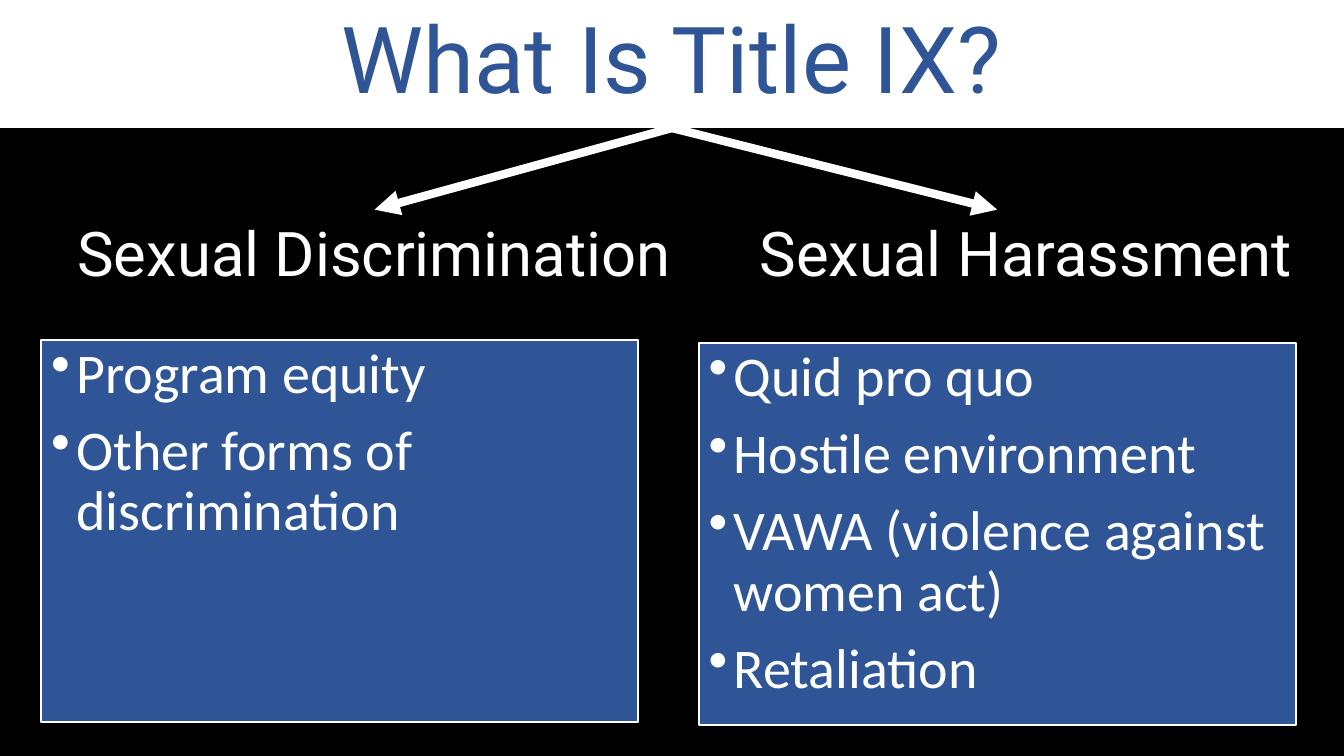
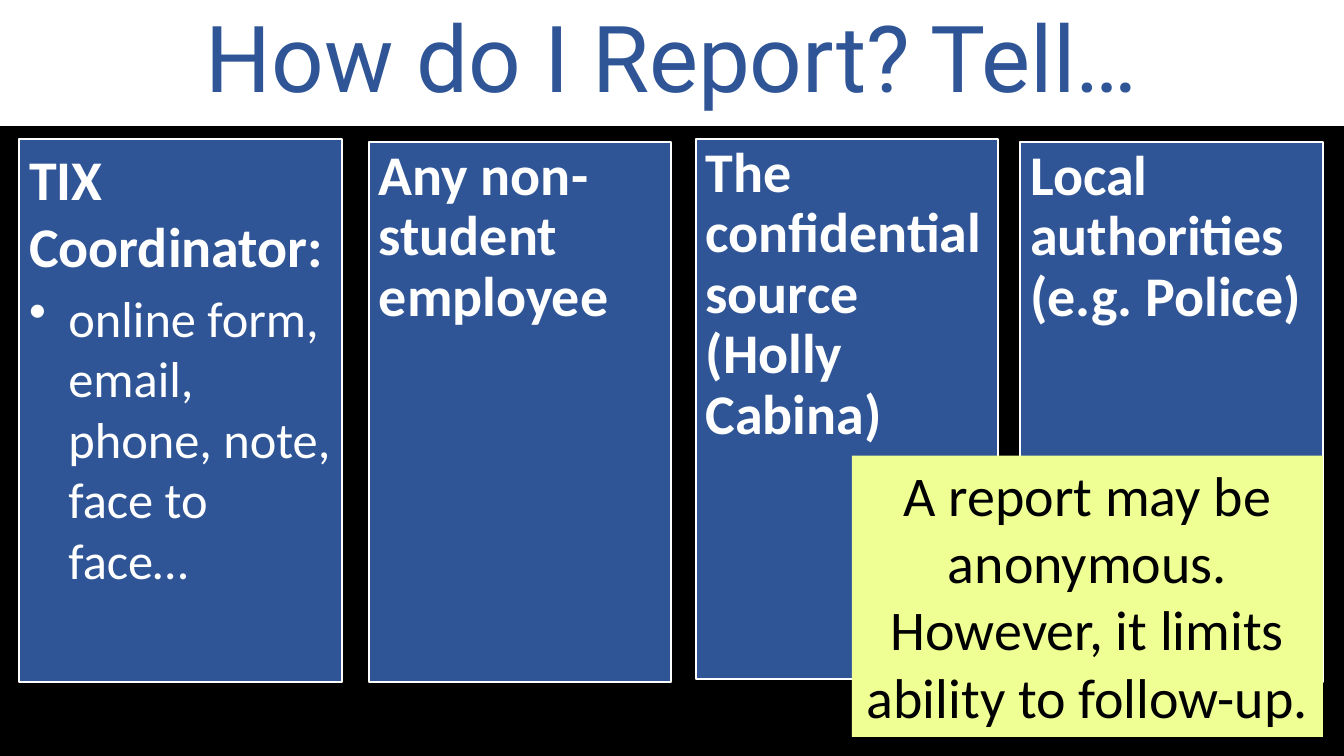
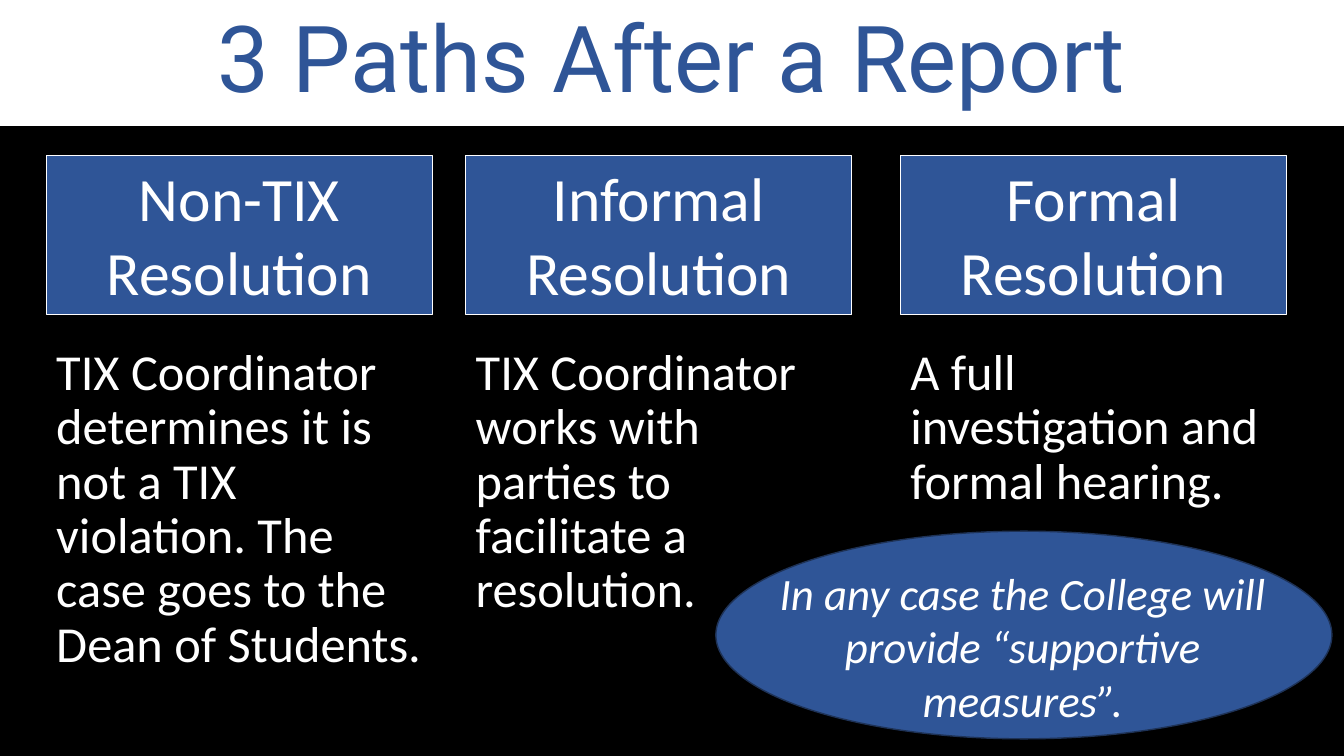
from lxml import etree
from pptx import Presentation
from pptx.dml.color import RGBColor
from pptx.enum.shapes import MSO_CONNECTOR, MSO_SHAPE
from pptx.enum.text import MSO_ANCHOR, PP_ALIGN
from pptx.oxml.ns import qn
from pptx.util import Inches, Pt

RECTANGLE, OVAL = MSO_SHAPE.RECTANGLE, MSO_SHAPE.OVAL
STRAIGHT = MSO_CONNECTOR.STRAIGHT
LEFT, CENTER = PP_ALIGN.LEFT, PP_ALIGN.CENTER
TOP, MIDDLE = MSO_ANCHOR.TOP, MSO_ANCHOR.MIDDLE
SIDE_TOP, SIDE_BOTTOM = 0, 2

COLORS = {
    "background": "000000",
    "white": "FFFFFF",
    "blue": "2F5597",
    "dark_blue": "1E3256",
    "yellow": "EFFF93",
    "black": "000000",
}
SLIDE_WIDTH, SLIDE_HEIGHT = 13.33, 7.5

# Text styles: font attributes, paragraph attributes, colour and hanging bullet
TITLE = {"font": {"name": "Roboto", "size": Pt(66)}, "color": "blue",
         "paragraph": {"alignment": CENTER, "line_spacing": 0.9}}
HEADING = {"font": {"name": "Roboto", "size": Pt(44)},
           "paragraph": {"alignment": CENTER}}
BODY = {"font": {"name": "Calibri", "size": Pt(36)},
        "paragraph": {"alignment": LEFT, "line_spacing": 0.9, "space_after": Pt(12)}}
BULLET = {**BODY, "font": {"name": "Calibri", "size": Pt(40)}, "bullet": 0.25}
STRONG = {**BODY, "font": {"name": "Calibri", "size": Pt(40), "bold": True}}
LOOSE = {"alignment": LEFT, "space_after": Pt(6)}
LEAD = {**STRONG, "paragraph": LOOSE}
DETAIL = {**BODY, "paragraph": LOOSE, "bullet": 0.39}
LABEL = {"font": {"name": "Calibri", "size": Pt(44)},
         "paragraph": {"alignment": CENTER}}
NOTE = {"font": {"name": "Calibri", "size": Pt(40)}, "color": "black",
        "paragraph": {"alignment": CENTER}}
REMARK = {"font": {"name": "Calibri", "size": Pt(32), "italic": True},
          "paragraph": {"alignment": CENTER}}


def color(name):
    return RGBColor.from_string(COLORS[name])


def set_attributes(target, values):
    for name, value in values.items():
        setattr(target, name, value)


def write(shape, items, anchor=TOP):
    """Fill a shape with (text, style) paragraphs."""
    frame = shape.text_frame
    set_attributes(frame, {"word_wrap": True, "vertical_anchor": anchor})
    for index, (text, style) in enumerate(items):
        paragraph = frame.add_paragraph() if index else frame.paragraphs[0]
        set_attributes(paragraph, style["paragraph"])
        run = paragraph.add_run()
        run.text = text
        set_attributes(run.font, style["font"])
        run.font.color.rgb = color(style.get("color", "white"))
        if "bullet" in style:
            properties = paragraph._p.get_or_add_pPr()
            indent = Inches(style["bullet"])
            properties.set("marL", str(indent))
            properties.set("indent", str(-indent))
            etree.SubElement(properties, qn("a:buChar")).set("char", "•")


def add_text(slide, box, text, style):
    shape = slide.shapes.add_textbox(*map(Inches, box))
    write(shape, [(text, style)])
    return shape


def add_panel(slide, box, items=(), fill="blue", line=None, width=1.5,
              kind=RECTANGLE, anchor=TOP):
    shape = slide.shapes.add_shape(kind, *map(Inches, box))
    shape.shadow.inherit = False
    shape.fill.solid()
    shape.fill.fore_color.rgb = color(fill)
    if line:
        shape.line.color.rgb = color(line)
        shape.line.width = Pt(width)
    else:
        shape.line.fill.background()
    write(shape, items, anchor)
    return shape


def add_arrow(slide, source, end):
    """Draw an arrow from the bottom middle of the source shape."""
    start = (source.left + source.width // 2, source.top + source.height)
    arrow = slide.shapes.add_connector(STRAIGHT, *start, *map(Inches, end))
    arrow.begin_connect(source, SIDE_BOTTOM)
    arrow.line.color.rgb = color("white")
    arrow.line.width = Pt(6)
    etree.SubElement(arrow.line._get_or_add_ln(), qn("a:tailEnd")).set("type", "triangle")
    etree.SubElement(arrow._element.spPr, qn("a:effectLst"))
    return arrow


def add_titled_slide(presentation, title, band_height=1.25):
    """Black slide with a white title band; returns the slide and the band."""
    slide = presentation.slides.add_slide(presentation.slide_layouts[6])
    slide.background.fill.solid()
    slide.background.fill.fore_color.rgb = color("background")
    band = add_panel(slide, (0, 0, SLIDE_WIDTH, band_height), [(title, TITLE)],
                     fill="white", anchor=MIDDLE)
    return slide, band


def add_path(slide, left, top, label, description):
    """Column with a label box above its description."""
    width = 3.83
    add_panel(slide, (left, top, width, 1.58), [(label, LABEL)],
              line="white", width=0.75)
    add_text(slide, (left, top + 1.85, width, 3.54), description, BODY)


def build_definition(presentation):
    slide, band = add_titled_slide(presentation, "What Is Title IX?", 1.27)
    # Bulleted panels
    panels = [
        (0.41, 3.37, ["Program equity", "Other forms of discrimination"]),
        (6.93, 3.4, ["Quid pro quo", "Hostile environment",
                     "VAWA (violence against women act)", "Retaliation"]),
    ]
    for left, top, lines in panels:
        add_panel(slide, (left, top, 5.92, 3.79),
                  [(text, BULLET) for text in lines], line="white")
    # Headings and the arrows leading to them
    discrimination = add_text(slide, (0.5, 2.08, 6.43, 0.84),
                              "Sexual Discrimination", HEADING)
    add_text(slide, (7.32, 2.08, 5.72, 0.84), "Sexual Harassment", HEADING)
    add_arrow(slide, band, (3.72, 2.08)).end_connect(discrimination, SIDE_TOP)
    add_arrow(slide, band, (9.89, 2.08))


def build_reporting(presentation):
    slide, _ = add_titled_slide(presentation, "How do I Report? Tell…")
    # People to tell
    columns = [
        ((0.19, 1.38, 3.2, 5.39),
         [("TIX Coordinator:", LEAD),
          ("online form, email, phone, note, face to face…", DETAIL)]),
        ((3.66, 1.41, 3, 5.36), [("Any non-student employee", STRONG)]),
        ((6.9, 1.38, 3, 5.36), [("The confidential source (Holly Cabina)", STRONG)]),
        ((10.12, 1.41, 3, 5.36), [("Local authorities (e.g. Police)", STRONG)]),
    ]
    for box, items in columns:
        add_panel(slide, box, items, line="white")
    # Note on anonymity
    add_panel(slide, (8.45, 4.52, 4.67, 2.79),
              [("A report may be anonymous. However, it limits ability to follow-up.",
                NOTE)], fill="yellow")


def build_paths(presentation):
    slide, _ = add_titled_slide(presentation, "3 Paths After a Report")
    # Three paths
    paths = [
        (0.46, "Non-TIX Resolution",
         "TIX Coordinator determines it is not a TIX violation. "
         "The case goes to the Dean of Students."),
        (4.62, "Informal Resolution",
         "TIX Coordinator works with parties to facilitate a resolution."),
        (8.93, "Formal Resolution", "A full investigation and formal hearing."),
    ]
    for left, label, description in paths:
        add_path(slide, left, 1.54, label, description)
    # Remark on supportive measures
    add_panel(slide, (7.1, 5.27, 6.11, 2.06), line="dark_blue", width=1, kind=OVAL)
    add_text(slide, (7.53, 5.56, 5.23, 1.72),
             "In any case the College will provide “supportive measures”.", REMARK)


def main():
    presentation = Presentation()
    presentation.slide_width = Inches(SLIDE_WIDTH)
    presentation.slide_height = Inches(SLIDE_HEIGHT)
    for build in (build_definition, build_reporting, build_paths):
        build(presentation)
    presentation.save("out.pptx")


if __name__ == "__main__":
    main()
